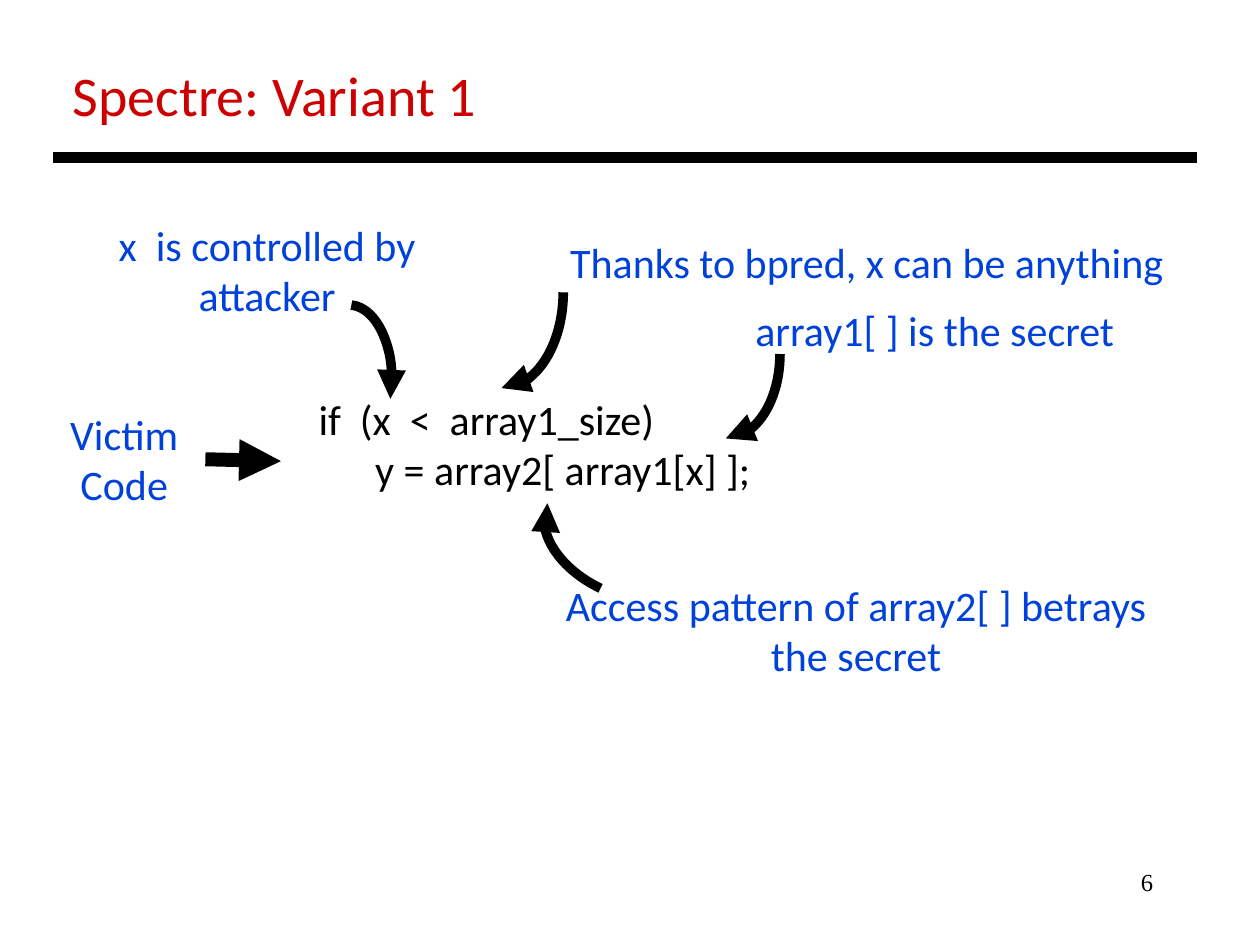
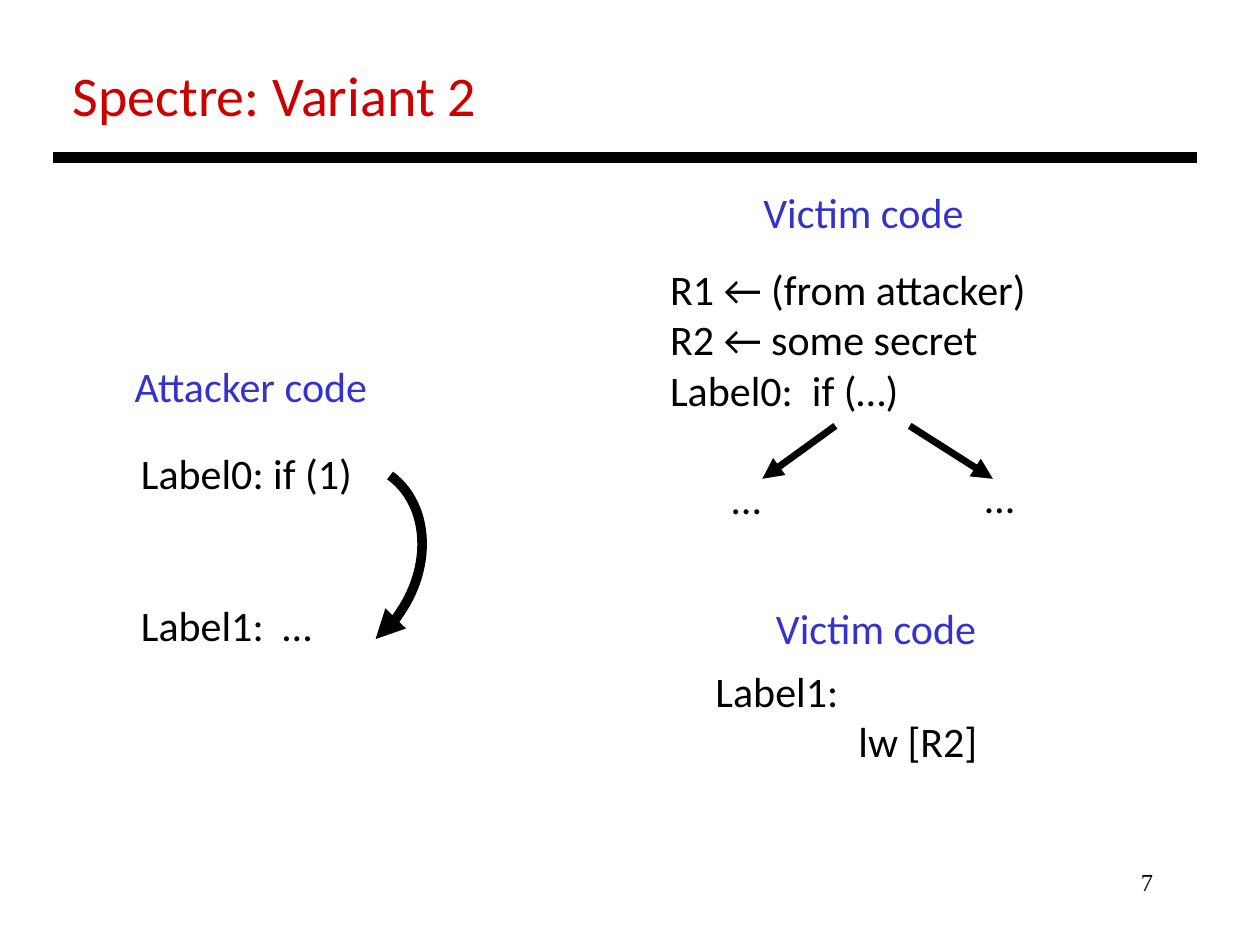
from typing import NamedTuple

import pptx
import pptx.dml.color
import pptx.enum.shapes
import pptx.enum.text
import pptx.oxml.ns
import pptx.util
from lxml import etree

# Shared look
SANS, SERIF = "Calibri", "Times New Roman"
BLACK, RED, BLUE, INDIGO = "000000", "CC0000", "0041DA", "3333CC"
LEFT = pptx.enum.text.PP_ALIGN.LEFT
MID = pptx.enum.text.PP_ALIGN.CENTER
RIGHT = pptx.enum.text.PP_ALIGN.RIGHT

# Grid of 100 columns by 75 rows; every length below counts these
WIDE, HIGH = pptx.util.Inches(10), pptx.util.Inches(7.5)
COL, ROW = WIDE / 100, HIGH / 75


class Label(NamedTuple):
    x: float
    y: float
    w: float
    h: float
    lines: tuple[str, ...]
    hue: str = BLACK
    align: object = LEFT
    wrap: bool = False
    size: int = 24
    face: str = SANS
    indent: float = 0  # columns, last line only
    gap: float = 0  # points above last line


class Arrow(NamedTuple):
    x1: float
    y1: float
    x2: float
    y2: float
    weight: float
    tip: bool = True


class Curve(NamedTuple):
    x: float
    y: float
    w: float
    h: float
    turn: float
    angles: tuple[float, float] = (270, 0)  # start and end, degrees


def across(n: float) -> int:
    return round(n * COL)


def down(n: float) -> int:
    return round(n * ROW)


def rgb(code: str):
    return pptx.dml.color.RGBColor.from_string(code)


def child(node, tag: str, **attrs):
    return etree.SubElement(node, pptx.oxml.ns.qn(tag), **attrs)


def ink(line, weight: float, tip: bool) -> None:
    line.color.rgb = rgb(BLACK)
    line.width = pptx.util.Pt(weight)
    if tip:
        child(line._get_or_add_ln(), "a:tailEnd", type="triangle")


def write(slide, item: Label):
    box = slide.shapes.add_textbox(across(item.x), down(item.y),
                                   across(item.w), down(item.h))
    frame = box.text_frame
    frame.word_wrap = item.wrap
    frame.text = "\n".join(item.lines)
    for para in frame.paragraphs:
        para.alignment = item.align
        para.font.name = item.face
        para.font.size = pptx.util.Pt(item.size)
        para.font.color.rgb = rgb(item.hue)
    last = frame.paragraphs[-1]
    if item.gap:
        last.space_before = pptx.util.Pt(item.gap)
    if item.indent:
        last._p.get_or_add_pPr().set("marL", str(across(item.indent)))
    return box


def link(slide, item: Arrow):
    line = slide.shapes.add_connector(
        pptx.enum.shapes.MSO_CONNECTOR.STRAIGHT,
        across(item.x1), down(item.y1), across(item.x2), down(item.y2))
    ink(line.line, item.weight, item.tip)
    child(line._element.spPr, "a:effectLst")
    return line


def bend(slide, item: Curve) -> None:
    arc = slide.shapes.add_shape(
        pptx.enum.shapes.MSO_SHAPE.ARC, across(item.x), down(item.y),
        across(item.w), down(item.h))
    arc.rotation = item.turn
    for i, angle in enumerate(item.angles):
        arc.adjustments[i] = angle * 0.6
    arc.shadow.inherit = False
    arc.fill.background()
    ink(arc.line, 5.5, True)


def note(x: float, y: float, w: float, h: float, text: str) -> Label:
    return Label(x, y, w, h, (text,), BLUE, MID, True)


def head(x: float, y: float, w: float, text: str) -> Label:
    return Label(x, y, w, 5, (text,), INDIGO)


def start(deck, title: str, number: int):
    """Add a slide with its page number, title and rule."""
    slide = deck.slides.add_slide(deck.slide_layouts[6])
    write(slide, Label(71.7, 68.3, 20.8, 5, (str(number),), align=RIGHT,
                       wrap=True, size=14, face=SERIF))
    write(slide, Label(4.8, 4.3, 34.4, 6.4, (title,), RED, size=32))
    link(slide, Arrow(4.2, 12.5, 95, 12.5, 6, False))
    return slide


# Variant 1
BOUNDS = Label(24.3, 30.7, 36.6, 9.1,
               ("if  (x  <  array1_size)", "y = array2[ array1[x] ];"),
               indent=4.5)
VICTIM = note(3.4, 31.9, 12.9, 9.1, "Victim Code")
NOTES = (
    note(6.5, 16.9, 29.4, 9.1, "x  is controlled by attacker"),
    note(53, 23.7, 42.4, 5.1, "array1[ ] is the secret"),
    note(42.1, 45.5, 51.7, 9.1,
         "Access pattern of array2[ ] betrays the secret"),
    note(37.6, 18.3, 62.4, 5.1, "Thanks to bpred, x can be anything"),
)
SWEEP = (271.82, 25.3)
CURVES = (
    Curve(24.3, 24.2, 6.8, 11.8, 0, SWEEP),
    Curve(50.9, 23.8, 13.4, 8.6, 90),
    Curve(42.8, 38.5, 13.4, 8.6, 205.3),
    Curve(32.2, 18.3, 15.2, 9.8, 90),
)

# Variant 2
CODE = (
    Label(52.2, 20.4, 30.8, 13.1,
          ("R1 ← (from attacker)", "R2 ← some secret", "Label0:  if (…)")),
    Label(57.1, 37, 5.1, 5, ("…",)),
    Label(77.2, 36.9, 5.1, 5, ("…",)),
    Label(55.8, 52.3, 22.8, 9.1, ("Label1:", "lw [R2]"), indent=11.35),
    Label(10.2, 35, 18.9, 17.2, ("Label0: if (1)", "Label1:  …"), gap=58),
)
HEADS = (
    head(59.6, 14.3, 18.8, "Victim code"),
    head(60.6, 47.3, 18.8, "Victim code"),
    head(9.7, 28.1, 21.5, "Attacker code"),
)
FORKS = (Arrow(66.3, 33.8, 60.5, 38, 4), Arrow(72.2, 33.8, 78.8, 38, 4))
JUMP = Curve(19.2, 36.2, 13.8, 16.9, 33.3, SWEEP)


def main() -> None:
    deck = pptx.Presentation()
    deck.slide_width, deck.slide_height = WIDE, HIGH

    first = start(deck, "Spectre: Variant 1", 6)
    write(first, BOUNDS)
    box = write(first, VICTIM)
    link(first, Arrow(16.3, 36.5, 22.3, 36.6, 8)).begin_connect(box, 3)
    for item in NOTES:
        write(first, item)
    for item in CURVES:
        bend(first, item)

    second = start(deck, "Spectre: Variant 2", 7)
    for item in CODE + HEADS:
        write(second, item)
    for item in FORKS:
        link(second, item)
    bend(second, JUMP)

    deck.save("out.pptx")


if __name__ == "__main__":
    main()
